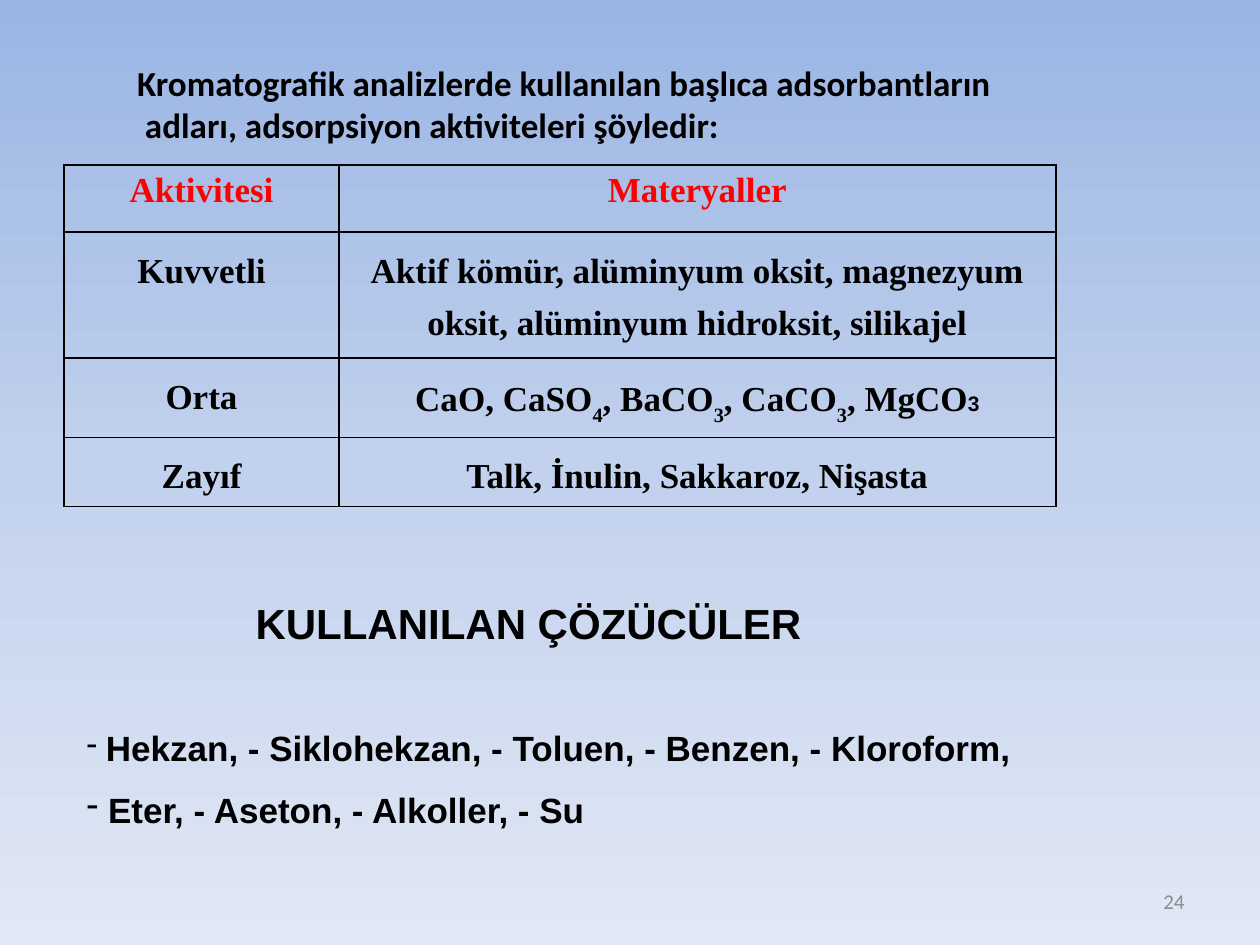
from copy import deepcopy

from lxml.etree import SubElement
from pptx import Presentation
from pptx.dml.color import RGBColor
from pptx.enum.text import MSO_ANCHOR, MSO_AUTO_SIZE, PP_ALIGN
from pptx.oxml.ns import qn
from pptx.util import Inches, Pt

COLORS = {
    "top": "9AB5E4",
    "middle": "C2D1ED",
    "bottom": "E1E8F5",
    "text": "000000",
    "header": "FF0000",
    "number": "8C8C8C",
}
SERIF = "Times New Roman"

MATERIALS = [
    ("Aktivitesi", "Materyaller"),
    ("Kuvvetli", "Aktif kömür, alüminyum oksit, magnezyum oksit, "
                 "alüminyum hidroksit, silikajel"),
    ("Orta", ["CaO, CaSO", "4", ", BaCO", "3", ", CaCO", "3", ", MgCO", "3"]),
    ("Zayıf", "Talk, İnulin, Sakkaroz, Nişasta"),
]


class SlideBuilder:
    def __init__(self, page):
        self.page = page

    def background(self, *names):
        """Fill the page from top to bottom with evenly spaced colour stops."""
        fill = self.page.background.fill
        fill.gradient()
        fill.gradient_angle = 270
        stop_list = self.page._element.find(".//" + qn("a:gsLst"))
        while len(stop_list) < len(names):
            stop_list.append(deepcopy(stop_list[0]))
        for index, (stop, name) in enumerate(zip(fill.gradient_stops, names)):
            stop.color.rgb = RGBColor.from_string(COLORS[name])
            stop.position = index / (len(names) - 1)

    def style(self, font, name, size, color="text", bold=True):
        font.name = name
        font.size = Pt(size)
        font.bold = bold
        font.color.rgb = RGBColor.from_string(COLORS[color])

    def text(self, place, lines, name, size, color="text", bold=True,
             align=PP_ALIGN.LEFT, anchor=MSO_ANCHOR.TOP, wrap=True, gap=0, bullet=None):
        box = self.page.shapes.add_textbox(*map(Inches, place))
        frame = box.text_frame
        frame.word_wrap = wrap
        frame.auto_size = MSO_AUTO_SIZE.NONE if wrap else MSO_AUTO_SIZE.SHAPE_TO_FIT_TEXT
        frame.vertical_anchor = anchor
        for index, line in enumerate(lines):
            para = frame.paragraphs[0] if index == 0 else frame.add_paragraph()
            para.alignment = align
            if index and gap:
                para.space_before = Pt(gap)
            if bullet:
                SubElement(para._p.get_or_add_pPr(), qn("a:buChar")).set("char", bullet)
            self.style(para.font, name, size, color, bold)
            para.add_run().text = line
        return box

    def table(self, place, columns, rows, content):
        shape = self.page.shapes.add_table(len(rows), len(columns), *map(Inches, place))
        table = shape.table
        for column, width in zip(table.columns, columns):
            column.width = Inches(width)
        for row, height in zip(table.rows, rows):
            row.height = Inches(height)
        for row_index, values in enumerate(content):
            for column_index, value in enumerate(values):
                self.cell(table.cell(row_index, column_index), value, row_index == 0)

    def cell(self, cell, value, header):
        """Write a cell; in a list, every second piece is a subscript."""
        self.borders(cell)
        cell.fill.background()
        para = cell.text_frame.paragraphs[0]
        para.alignment = PP_ALIGN.CENTER
        if not header:
            para.line_spacing = 1.35
        self.style(para.font, SERIF, 20, "header" if header else "text")
        pieces = [value] if isinstance(value, str) else value
        for index, piece in enumerate(pieces):
            span = para.add_run()
            span.text = piece
            if index % 2 and index < len(pieces) - 1:
                span.font._element.set("baseline", "-30000")
            elif index % 2:
                self.style(span.font, "Arial", 12)

    def borders(self, cell):
        properties = cell._tc.get_or_add_tcPr()
        for side in ("a:lnL", "a:lnR", "a:lnT", "a:lnB"):
            line = SubElement(properties, qn(side), w=str(Pt(1)))
            fill = SubElement(line, qn("a:solidFill"))
            SubElement(fill, qn("a:srgbClr"), val=COLORS["text"])


def main():
    deck = Presentation()
    deck.slide_width, deck.slide_height = Inches(10), Inches(7.5)
    builder = SlideBuilder(deck.slides.add_slide(deck.slide_layouts[6]))

    builder.background("top", "middle", "bottom")
    builder.text((0.99, 0.44, 7.03, 0.77),
                 ["Kromatografik analizlerde kullanılan başlıca adsorbantların",
                  " adları, adsorpsiyon aktiviteleri şöyledir:"],
                 "Calibri", 20, align=PP_ALIGN.JUSTIFY, anchor=MSO_ANCHOR.MIDDLE, wrap=False)
    builder.table((0.51, 1.31, 7.87, 2.64), [2.18, 5.69], [0.53, 1, 0.55, 0.55], MATERIALS)
    builder.text((1.93, 4.69, 6.54, 0.5), ["KULLANILAN ÇÖZÜCÜLER"], "Arial", 24)

    solvents = builder.text((0.59, 5.72, 7.8, 0.93),
                            [" ", " Eter, - Aseton, - Alkoller, - Su"],
                            "Arial", 20, gap=11, bullet="-")
    first = solvents.text_frame.paragraphs[0]
    builder.style(first.runs[0].font, "Arial", 18, bold=False)
    first.add_run().text = "Hekzan, - Siklohekzan, - Toluen, - Benzen, - Kloroform,"

    builder.text((7.17, 6.95, 2.33, 0.4), ["24"], "Calibri", 12, "number", False,
                 align=PP_ALIGN.RIGHT, anchor=MSO_ANCHOR.MIDDLE)
    deck.save("out.pptx")


if __name__ == "__main__":
    main()
